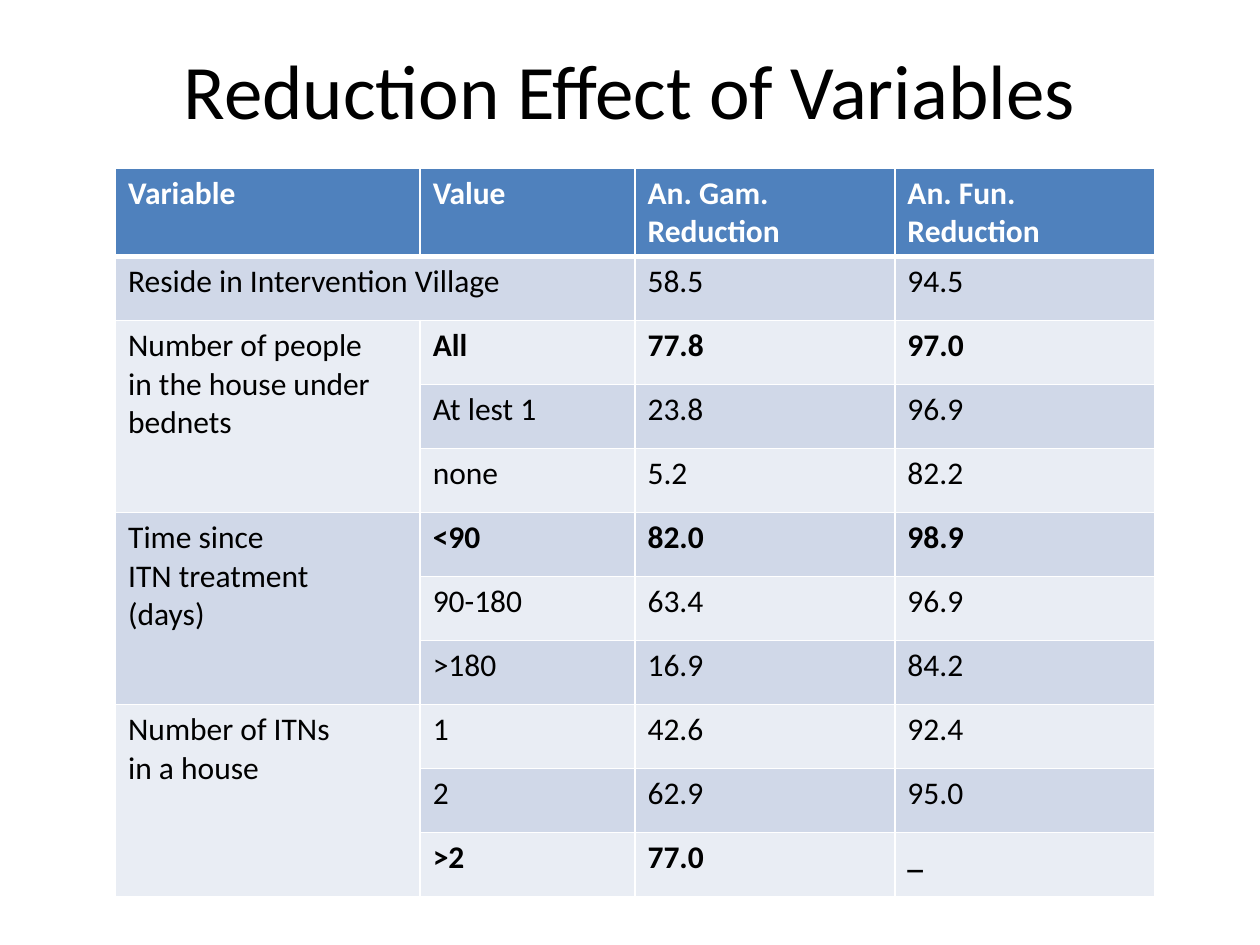
from lxml import etree
from pptx import Presentation
from pptx.dml.color import RGBColor
from pptx.enum import text
from pptx.oxml.ns import qn
from pptx.util import Cm, Pt

FONT = "Calibri"
BLACK, WHITE, HEADER = "000000", "FFFFFF", "4F81BD"
BANDS = ("D0D8E8", "E9EDF4")
COLUMN_WIDTHS = (6.14, 4.33, 5.24, 5.24)
ROW_HEIGHT = 1.29

HEADINGS = ("Variable", "Value", "An. Gam. Reduction", "An. Fun. Reduction")
# Each group: label, then its rows of value and two reductions
GROUPS = (
    ("Reside in Intervention Village", [("", "58.5", "94.5")]),
    ("Number of people\nin the house under\nbednets",
     [("All", "77.8", "97.0"), ("At lest 1", "23.8", "96.9"), ("none", "5.2", "82.2")]),
    ("Time since\nITN treatment\n(days)",
     [("<90", "82.0", "98.9"), ("90-180", "63.4", "96.9"), (">180", "16.9", "84.2")]),
    ("Number of ITNs\nin a house",
     [("1", "42.6", "92.4"), ("2", "62.9", "95.0"), (">2", "77.0", "_")]),
)
BOLD_VALUES = ("All", "<90", ">2")


def rgb(color):
    return RGBColor.from_string(color)


def style_text(frame, size, color, bold=False, alignment=None):
    for paragraph in frame.paragraphs:
        paragraph.alignment = alignment
        font = paragraph.font
        font.name, font.size, font.bold = FONT, Pt(size), bold
        font.color.rgb = rgb(color)


def add_title(slide, words):
    box = slide.shapes.add_textbox(Cm(1.27), Cm(0.2), Cm(22.86), Cm(3.18))
    frame = box.text_frame
    frame.word_wrap = True
    frame.vertical_anchor = text.MSO_ANCHOR.MIDDLE
    frame.text = words
    style_text(frame, 44, BLACK, alignment=text.PP_ALIGN.CENTER)


def set_borders(cell, top, bottom):
    properties = cell._tc.get_or_add_tcPr()
    for side, width in (("L", 1), ("R", 1), ("T", top), ("B", bottom)):
        line = etree.SubElement(properties, qn(f"a:ln{side}"), w=str(Pt(width)))
        fill = etree.SubElement(line, qn("a:solidFill"))
        etree.SubElement(fill, qn("a:srgbClr"), val=WHITE)


def fill_cell(cell, words, row, bold):
    # A thick rule separates the header from the body
    set_borders(cell, 3 if row == 1 else 1, 3 if row == 0 else 1)
    cell.fill.solid()
    cell.fill.fore_color.rgb = rgb(BANDS[(row - 1) % 2] if row else HEADER)
    cell.text = words
    style_text(cell.text_frame, 18, BLACK if row else WHITE, bold)


def add_reduction_table(slide):
    row_count = 1 + sum(len(rows) for _, rows in GROUPS)
    frame = slide.shapes.add_table(
        row_count, len(HEADINGS), Cm(2.33), Cm(3.39),
        Cm(sum(COLUMN_WIDTHS)), Cm(ROW_HEIGHT * row_count))
    table = frame.table
    for column, width in zip(table.columns, COLUMN_WIDTHS):
        column.width = Cm(width)
    for row in table.rows:
        row.height = Cm(ROW_HEIGHT)

    # Header
    for column, heading in enumerate(HEADINGS):
        fill_cell(table.cell(0, column), heading, 0, True)

    # Groups: the label spans its rows, or the value column if that is empty
    row = 1
    for label, rows in GROUPS:
        first = row
        for values in rows:
            fill_cell(table.cell(row, 0), label if row == first else "", row, False)
            for column, value in enumerate(values, 1):
                fill_cell(table.cell(row, column), value, row, values[0] in BOLD_VALUES)
            row += 1
        last_column = 0 if rows[0][0] else 1
        table.cell(first, 0).merge(table.cell(row - 1, last_column))


def main():
    presentation = Presentation()
    presentation.slide_width, presentation.slide_height = Cm(25.4), Cm(19.05)
    slide = presentation.slides.add_slide(presentation.slide_layouts[6])
    add_title(slide, "Reduction Effect of Variables")
    add_reduction_table(slide)
    presentation.save("out.pptx")


if __name__ == "__main__":
    main()
